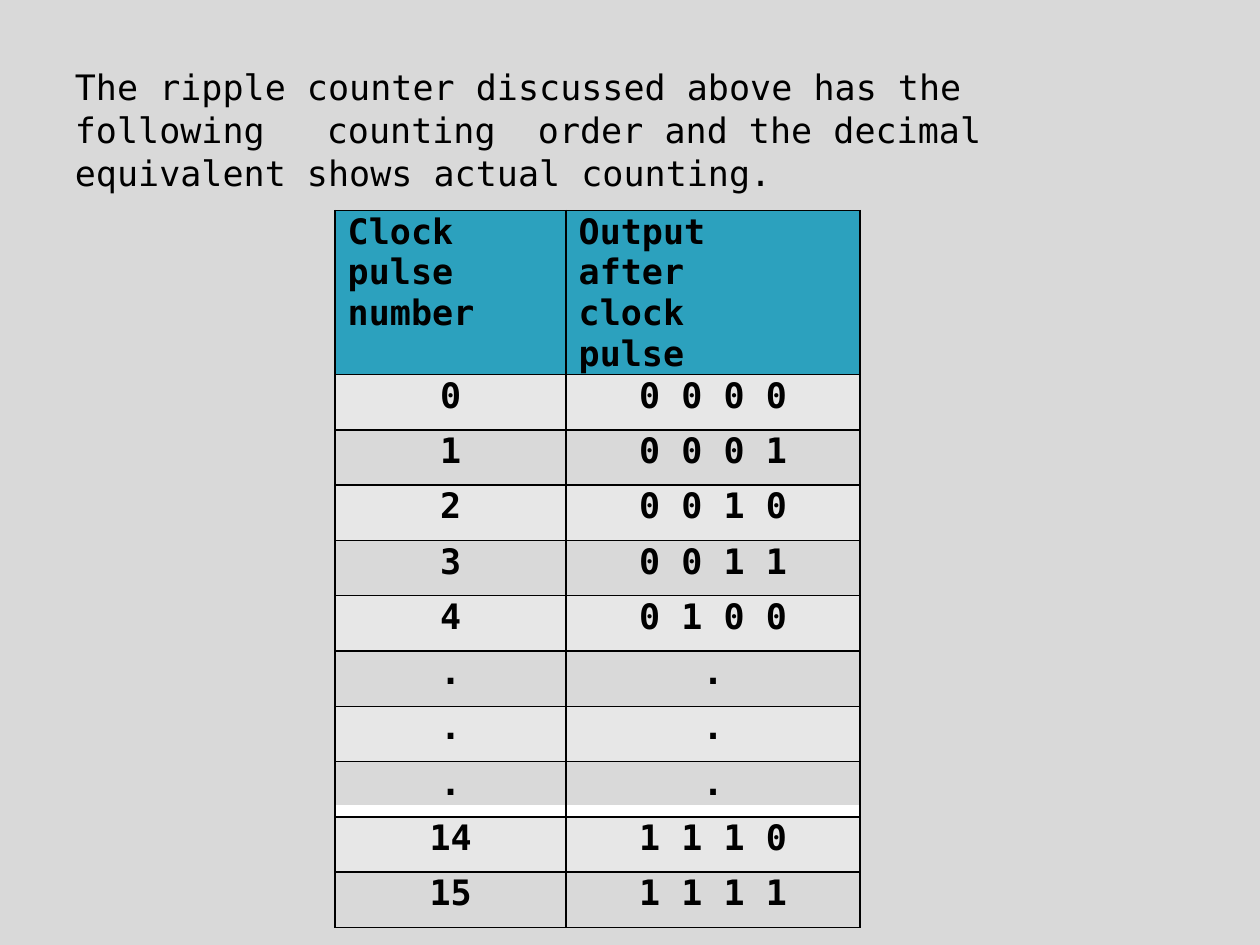
from lxml import etree
from pptx import Presentation
from pptx.dml.color import RGBColor
from pptx.enum.shapes import MSO_SHAPE
from pptx.enum.text import PP_ALIGN
from pptx.oxml.ns import qn
from pptx.util import Pt

RECTANGLE = MSO_SHAPE.RECTANGLE
LEFT, CENTER = PP_ALIGN.LEFT, PP_ALIGN.CENTER

BLACK = RGBColor(0x00, 0x00, 0x00)
WHITE = RGBColor(0xFF, 0xFF, 0xFF)
BACKGROUND = RGBColor(0xD9, 0xD9, 0xD9)
HEADER_FILL = RGBColor(0x2C, 0xA1, 0xBE)
BAND_FILL = RGBColor(0xE7, 0xE7, 0xE7)

# Content
INTRO = ("The ripple counter discussed above has the following\tcounting\t"
         "order and the decimal equivalent shows actual counting.")
INTRO_TABS = (144, 264.6)
ROWS = [
    ("Clock pulse number", "Output after clock pulse"),
    ("0", "0 0 0 0"),
    ("1", "0 0 0 1"),
    ("2", "0 0 1 0"),
    ("3", "0 0 1 1"),
    ("4", "0 1 0 0"),
    (".", "."),
    (".", "."),
    (".", "."),
    ("14", "1 1 1 0"),
    ("15", "1 1 1 1"),
]

# Layout in points
TABLE_LEFT, TABLE_TOP = 191.5, 120.3
COLUMN_WIDTHS = (132, 168)
HEADER_HEIGHT, ROW_HEIGHT = 55.7, 31.6
STRIP_TOP = 460.1
BODY_MARGINS = {"margin_left": 0, "margin_top": Pt(0.7),
                "margin_right": 0, "margin_bottom": 0}
HEADER_MARGINS = {**BODY_MARGINS, "margin_left": Pt(7.2), "margin_right": Pt(36)}
FONT = {"name": "DejaVu Sans Mono", "size": Pt(20)}


def set_attributes(target, values):
    for name, value in values.items():
        setattr(target, name, value)


def write(text_frame, text, bold, paragraph_format):
    paragraph = text_frame.paragraphs[0]
    set_attributes(paragraph, paragraph_format)
    run = paragraph.add_run()
    run.text = text
    set_attributes(run.font, {**FONT, "bold": bold})
    run.font.color.rgb = BLACK
    return paragraph


def add_tabs(paragraph, positions):
    tab_list = etree.SubElement(paragraph._p.get_or_add_pPr(), qn("a:tabLst"))
    for position in positions:
        etree.SubElement(tab_list, qn("a:tab"), pos=str(Pt(position)), algn="l")


def add_borders(cell):
    properties = cell._tc.get_or_add_tcPr()
    for index, side in enumerate(("lnL", "lnR", "lnT", "lnB")):
        line = etree.Element(qn("a:" + side), w=str(Pt(1)))
        fill = etree.SubElement(line, qn("a:solidFill"))
        etree.SubElement(fill, qn("a:srgbClr"), val=str(BLACK))
        properties.insert(index, line)


def fill_cell(cell, text, row_index):
    is_header = row_index == 0
    set_attributes(cell, HEADER_MARGINS if is_header else BODY_MARGINS)
    write(cell.text_frame, text, True,
          {"alignment": LEFT if is_header else CENTER})
    if is_header or row_index % 2:
        cell.fill.solid()
        cell.fill.fore_color.rgb = HEADER_FILL if is_header else BAND_FILL
    else:
        cell.fill.background()
    add_borders(cell)


presentation = Presentation()
presentation.slide_width, presentation.slide_height = Pt(720), Pt(540)
slide = presentation.slides.add_slide(presentation.slide_layouts[6])
slide.background.fill.solid()
slide.background.fill.fore_color.rgb = BACKGROUND

# White strip behind the table
strip = slide.shapes.add_shape(RECTANGLE, Pt(TABLE_LEFT), Pt(STRIP_TOP),
                               Pt(sum(COLUMN_WIDTHS)), Pt(ROW_HEIGHT))
strip.shadow.inherit = False
strip.fill.solid()
strip.fill.fore_color.rgb = WHITE
strip.line.fill.background()

# Counting table
table_height = HEADER_HEIGHT + ROW_HEIGHT * (len(ROWS) - 1)
table = slide.shapes.add_table(
    len(ROWS), len(COLUMN_WIDTHS), Pt(TABLE_LEFT), Pt(TABLE_TOP),
    Pt(sum(COLUMN_WIDTHS)), Pt(table_height)).table
for column, width in zip(table.columns, COLUMN_WIDTHS):
    column.width = Pt(width)
for row_index, texts in enumerate(ROWS):
    table.rows[row_index].height = Pt(ROW_HEIGHT if row_index else HEADER_HEIGHT)
    for column_index, text in enumerate(texts):
        fill_cell(table.cell(row_index, column_index), text, row_index)

# Introduction
intro = slide.shapes.add_textbox(Pt(42.8), Pt(36), Pt(618), Pt(50.4))
set_attributes(intro.text_frame, {**BODY_MARGINS, "word_wrap": True})
intro_paragraph = write(intro.text_frame, INTRO, False,
                        {"alignment": LEFT, "line_spacing": 1.03})
add_tabs(intro_paragraph, INTRO_TABS)

presentation.save("out.pptx")
